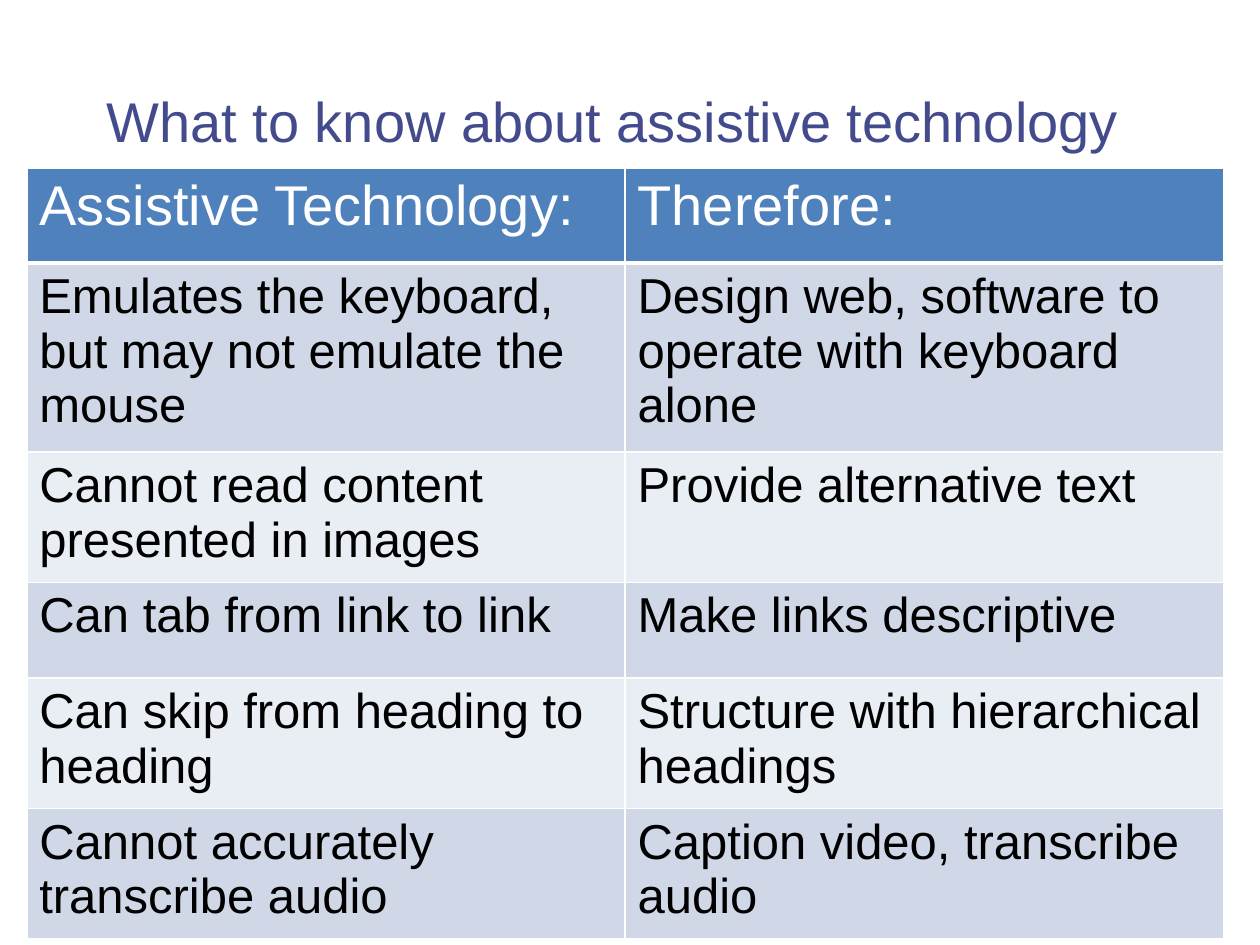
from pptx import Presentation
from pptx import util as u
from pptx.dml.color import RGBColor
from pptx.enum import text
from pptx.oxml import parse_xml
from pptx.oxml.ns import nsdecls


def style(p, size, color):
    for r in p.runs:
        r.font.name = "Arial"
        r.font.size = u.Pt(size)
        r.font.bold = False
        r.font.color.rgb = RGBColor.from_string(color)


def add_border(cell, side, width, color):
    props = cell._tc.get_or_add_tcPr()
    props.append(parse_xml(
        f'<a:{side} {nsdecls("a")} w="{u.Pt(width)}"><a:solidFill>'
        f'<a:srgbClr val="{color}"/></a:solidFill></a:{side}>'))


prs = Presentation()
prs.slide_width = u.Cm(25.4)
prs.slide_height = u.Cm(19.05)
s = prs.slides.add_slide(prs.slide_layouts[6])

title = s.shapes.add_textbox(u.Cm(1.9), u.Cm(1.04), u.Cm(22.86), u.Cm(2.77))
tf = title.text_frame
tf.word_wrap = True
tf.vertical_anchor = text.MSO_ANCHOR.MIDDLE
tf.text = "What to know about assistive technology"
style(tf.paragraphs[0], 32, "444B8D")

rows = [
    ("Assistive Technology:", "Therefore:"),
    ("Emulates the keyboard, but may not emulate the mouse",
     "Design web, software to operate with keyboard alone"),
    ("Cannot read content presented in images", "Provide alternative text"),
    ("Can tab from link to link", "Make links descriptive"),
    ("Can skip from heading to heading", "Structure with hierarchical headings"),
    ("Cannot accurately transcribe audio", "Caption video, transcribe audio"),
]
heights = [1.9] + [1.93] * 5

table = s.shapes.add_table(len(rows), 2, u.Cm(0.54), u.Cm(3.4),
                           u.Cm(24.12), u.Cm(sum(heights))).table
for col in table.columns:
    col.width = u.Cm(12.06)

for i, row in enumerate(rows):
    table.rows[i].height = u.Cm(heights[i])
    if i == 0:
        size, color, fill = 32, "FFFFFF", "4F81BD"
    else:
        size, color, fill = 28, "000000", "D0D8E8" if i % 2 else "E9EDF4"
    for j, label in enumerate(row):
        cell = table.cell(i, j)
        cell.text_frame.text = label
        style(cell.text_frame.paragraphs[0], size, color)
        for side in ("lnL", "lnR", "lnT", "lnB"):
            thick = (i, side) in ((0, "lnB"), (1, "lnT"))
            add_border(cell, side, 3 if thick else 1, "FFFFFF")
        cell.fill.solid()
        cell.fill.fore_color.rgb = RGBColor.from_string(fill)

prs.save("out.pptx")
